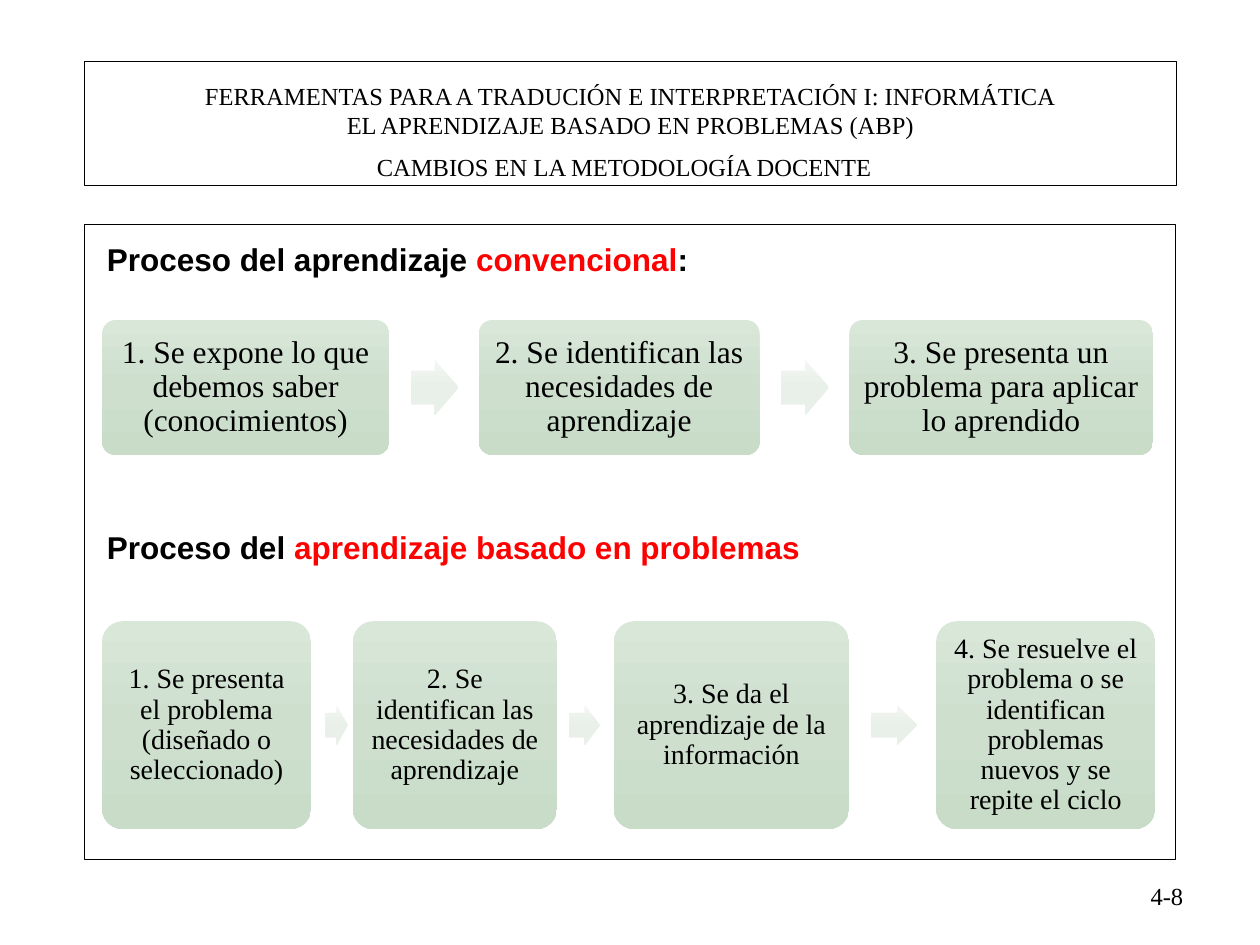
from copy import deepcopy

from pptx import Presentation
from pptx.dml.color import RGBColor
from pptx.enum.shapes import MSO_SHAPE
from pptx.enum.text import MSO_ANCHOR, MSO_AUTO_SIZE, PP_ALIGN
from pptx.oxml.ns import qn
from pptx.util import Inches, Pt

RECTANGLE = MSO_SHAPE.RECTANGLE
ROUNDED = MSO_SHAPE.ROUNDED_RECTANGLE
ARROW = MSO_SHAPE.RIGHT_ARROW
TOP, MIDDLE = MSO_ANCHOR.TOP, MSO_ANCHOR.MIDDLE
LEFT, CENTER, RIGHT = PP_ALIGN.LEFT, PP_ALIGN.CENTER, PP_ALIGN.RIGHT
NO_AUTOFIT = MSO_AUTO_SIZE.NONE

SERIF, SANS = "Times New Roman", "Arial"
BLACK, RED = "000000", "FF0000"
STEP_GREENS = ("D9E7D9", "CEDFCE", "C8DCC8")
ARROW_GREENS = ("F3F7F3", "E9F0E9", "E6EEE6")

HEADER = (
    "FERRAMENTAS PARA A TRADUCIÓN E INTERPRETACIÓN I: INFORMÁTICA",
    "EL APRENDIZAJE BASADO EN PROBLEMAS (ABP)",
)
CONVENTIONAL_STEPS = (
    (0.81, 2.28, "1. Se expone lo que debemos saber (conocimientos)"),
    (3.8, 2.23, "2. Se identifican las necesidades de aprendizaje"),
    (6.74, 2.41, "3. Se presenta un problema para aplicar lo aprendido"),
)
CONVENTIONAL_ARROWS = ((3.26, 0.38), (6.2, 0.38))
PROBLEM_STEPS = (
    (0.81, 1.66, "1. Se presenta el problema (diseñado o seleccionado)"),
    (2.8, 1.62, "2. Se identifican las necesidades de aprendizaje"),
    (4.87, 1.87, "3. Se da el aprendizaje de la información"),
    (7.43, 1.74, "4. Se resuelve el problema o se identifican problemas nuevos y se repite el ciclo"),
)
PROBLEM_ARROWS = ((2.58, 0.18), (4.52, 0.24), (6.91, 0.37))


def rgb(hex_color):
    """Turn a hex string into a colour."""
    return RGBColor.from_string(hex_color)


def write(frame, *paragraphs, size=14, font=SERIF, bold=False, align=CENTER,
          anchor=TOP, spacing=None, margins=(0.1, 0.05)):
    """Fill a text frame with paragraphs, each a string or (text, colour) runs."""
    frame.word_wrap = True
    frame.auto_size = NO_AUTOFIT
    frame.vertical_anchor = anchor
    frame.margin_left = frame.margin_right = Inches(margins[0])
    frame.margin_top = frame.margin_bottom = Inches(margins[1])
    for index, content in enumerate(paragraphs):
        paragraph = frame.add_paragraph() if index else frame.paragraphs[0]
        paragraph.alignment = align
        paragraph.line_spacing = spacing
        paragraph.space_before = Pt(0)
        runs = ((content, BLACK),) if isinstance(content, str) else content
        for text, color in runs:
            run = paragraph.add_run()
            run.text = text
            run.font.name = font
            run.font.size = Pt(size)
            run.font.bold = bold
            run.font.color.rgb = rgb(color)


def add_label(slide, box, *paragraphs, **style):
    """Add a text box."""
    label = slide.shapes.add_textbox(*map(Inches, box))
    write(label.text_frame, *paragraphs, **style)


def add_frame(slide, box):
    """Add an unfilled rectangle with a thin black outline."""
    frame = slide.shapes.add_shape(RECTANGLE, *map(Inches, box))
    frame.shadow.inherit = False
    frame.fill.background()
    frame.line.color.rgb = rgb(BLACK)
    frame.line.width = Pt(0.75)
    return frame


def add_gradient_shape(slide, kind, box, greens, adjustments):
    """Add a borderless shape with a three-colour gradient from top to bottom."""
    shape = slide.shapes.add_shape(kind, *map(Inches, box))
    shape.shadow.inherit = False
    shape.line.fill.background()
    for index, value in enumerate(adjustments):
        shape.adjustments[index] = value
    shape.fill.gradient()
    shape.fill.gradient_angle = 270
    stop_list = shape._element.spPr.find(".//" + qn("a:gsLst"))
    stop_list.append(deepcopy(stop_list[0]))
    for index, (stop, green) in enumerate(zip(shape.fill.gradient_stops, greens)):
        stop.position = index / 2
        stop.color.rgb = rgb(green)
    return shape


def add_process(slide, top, height, steps, arrows, arrow_height, size):
    """Add a row of steps with arrows centred on it."""
    for left, width, text in steps:
        step = add_gradient_shape(slide, ROUNDED, (left, top, width, height),
                                  STEP_GREENS, (0.1,))
        write(step.text_frame, text, size=size, anchor=MIDDLE, spacing=0.9,
              margins=(0.07, 0.07))
    arrow_top = top + (height - arrow_height) / 2
    for left, width in arrows:
        add_gradient_shape(slide, ARROW, (left, arrow_top, width, arrow_height),
                           ARROW_GREENS, (0.6, 0.5))


def add_title(slide, box, text):
    """Place and write the slide title."""
    title = slide.shapes.title
    title.left, title.top, title.width, title.height = map(Inches, box)
    write(title.text_frame, text)


def main():
    """Build the slide and save it."""
    deck = Presentation()
    deck.slide_width, deck.slide_height = Inches(10), Inches(7.5)
    slide = deck.slides.add_slide(deck.slide_layouts[5])

    header = add_frame(slide, (0.67, 0.49, 8.67, 0.98))
    write(header.text_frame, *HEADER, margins=(0.1, 0.15))
    add_title(slide, (0.98, 1.16, 7.95, 0.34), "CAMBIOS EN LA METODOLOGÍA DOCENTE")
    add_frame(slide, (0.67, 1.78, 8.66, 5.04))

    heading = {"size": 18, "font": SANS, "bold": True, "align": LEFT}
    add_label(slide, (0.75, 1.86, 8.5, 0.4),
              (("Proceso del aprendizaje ", BLACK), ("convencional", RED), (":", BLACK)),
              **heading)
    add_process(slide, 2.54, 1.07, CONVENTIONAL_STEPS, CONVENTIONAL_ARROWS, 0.44, 18)

    add_label(slide, (0.75, 4.14, 8.5, 0.4),
              (("Proceso del ", BLACK), ("aprendizaje basado en problemas", RED)),
              **heading)
    add_process(slide, 4.93, 1.65, PROBLEM_STEPS, PROBLEM_ARROWS, 0.32, 16)

    add_label(slide, (6.42, 6.94, 3.07, 0.28), "4-8", align=RIGHT)
    deck.save("out.pptx")


if __name__ == "__main__":
    main()
